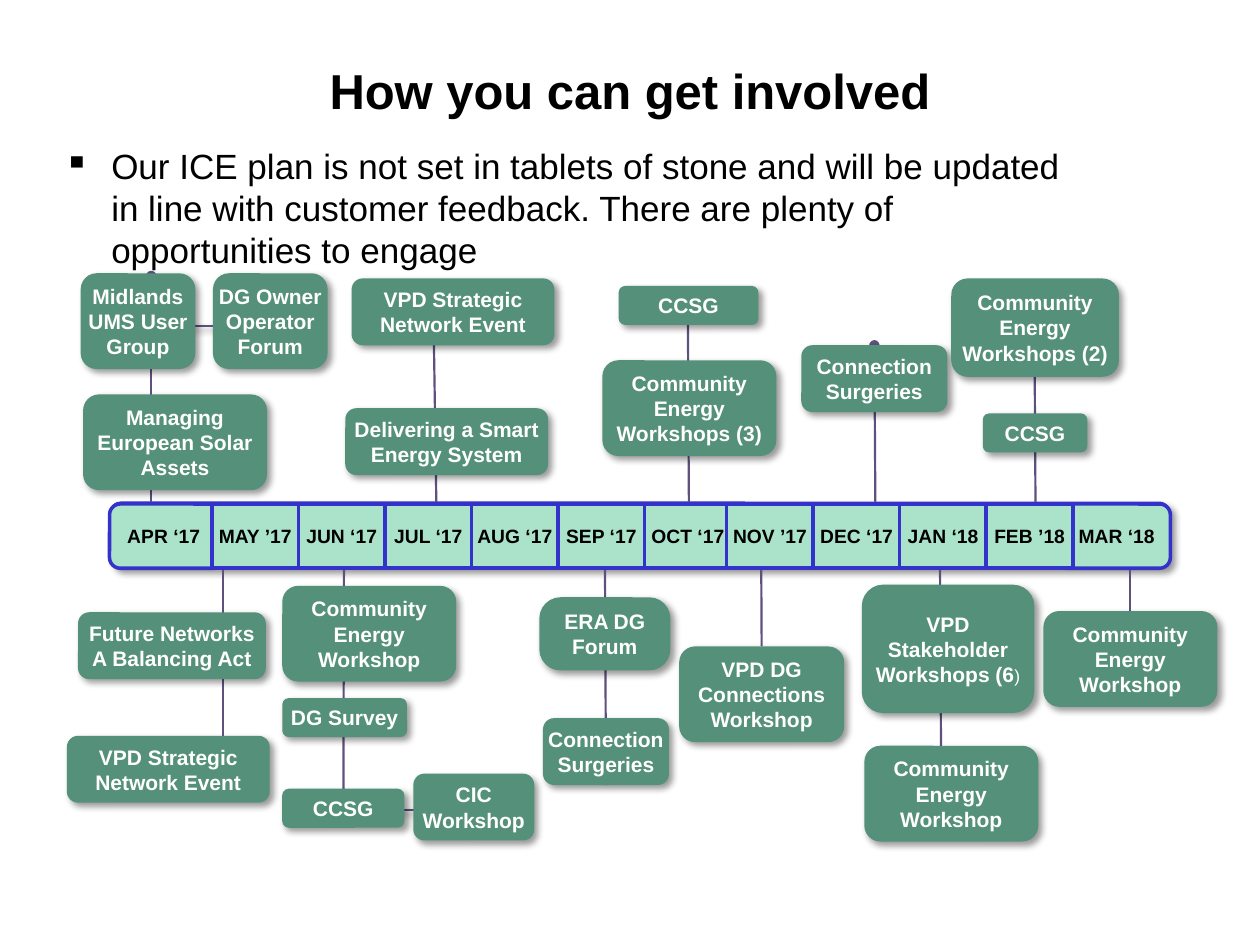
"""Build a one-slide yearly timeline of engagement events around a bar of months."""
from lxml.etree import SubElement
from pptx import Presentation
from pptx.dml.color import RGBColor
from pptx.enum.shapes import MSO_CONNECTOR, MSO_SHAPE
from pptx.enum.text import MSO_ANCHOR, PP_ALIGN
from pptx.oxml.ns import qn
from pptx.util import Pt

COLORS = {"text": "000000", "event": "55917A", "event_text": "FFFFFF",
          "month": "AAE2CA", "border": "3333CC", "link": "5F507E"}
TITLE = "How you can get involved"
BODY = ("Our ICE plan is not set in tablets of stone and will be updated in line with "
        "customer feedback. There are plenty of opportunities to engage")
FIRST, LAST = "APR ‘17", "MAR ‘18"
MONTHS = ["MAY ’17", "JUN ‘17", "JUL ‘17", "AUG ‘17", "SEP ‘17", "OCT ‘17",
          "NOV ’17", "DEC ‘17", "JAN ‘18", "FEB ’18"]
BAR_X, BAR_Y, BAR_W, BAR_H = 62.6, 288, 606.2, 36.7
CAP_W, MONTH_W, MONTH_X, PITCH = 66.2, 49.7, 121, 49.45
SECOND_HALF, HALF_SHIFT = 6, 2.5
ONE, TWO, THREE = 22.3, 38.2, 54.7

EVENTS = {
    "midlands": ("Midlands UMS User Group", 46.1, 156.2, 65.5, THREE),
    "owners": ("DG Owner Operator Forum", 121.7, 156.2, 65.5, THREE),
    "solar": ("Managing European Solar Assets", 47.5, 225.4, 105.1, THREE),
    "networks": ("Future Networks A Balancing Act", 44.6, 349.9, 107.3, TWO),
    "strategic_may": ("VPD Strategic Network Event", 38.2, 420.5, 115.9, TWO),
    "community_jun": ("Community Energy Workshop", 161.3, 334.8, 99.4, THREE),
    "survey": ("DG Survey", 161.3, 398.9, 71.3, ONE),
    "ccsg_jun": ("CCSG", 161.3, 450.7, 69.8, ONE),
    "cic": ("CIC Workshop", 236.2, 442.1, 69.1, TWO),
    "strategic_jul": ("VPD Strategic Network Event", 200.9, 159.1, 115.9, TWO),
    "smart": ("Delivering a Smart Energy System", 197.3, 233.3, 115.9, TWO),
    "forum": ("ERA DG Forum", 308.2, 341.3, 74.9, 41.8),
    "surgeries_sep": ("Connection Surgeries", 310.3, 410.4, 72, TWO),
    "ccsg_oct": ("CCSG", 353.5, 163.4, 79.9, ONE),
    "community_oct": ("Community Energy Workshops (3)", 344.2, 205.9, 99.4, THREE),
    "connections": ("VPD DG Connections Workshop", 388.1, 369.4, 94.3, THREE),
    "surgeries_dec": ("Connection Surgeries", 457.9, 197.3, 83.5, TWO),
    "stakeholder": ("VPD Stakeholder Workshops (6", 492.5, 334.1, 98.6, 73.4),
    "community_jan": ("Community Energy Workshop", 493.9, 426.2, 99.4, THREE),
    "community_feb": ("Community Energy Workshops (2)", 543.6, 159.1, 95.8, 56.2),
    "ccsg_feb": ("CCSG", 561.6, 236.2, 59.8, ONE),
    "community_mar": ("Community Energy Workshop", 596.2, 349.2, 99.4, THREE),
}
LINKS = {
    "owners": (136.1, 186.5, 79.2, 186.5),
    "jun": (196.2, 473, 196.6, 299.5),
    "cic": (276.5, 463, 218.9, 463),
    "apr": (86.4, 305.3, 86.4, 157.7),
    "jul": (249.8, 316.8, 247.7, 177.8),
    "feb": (591.8, 298.1, 591.1, 186.5),
    "dec": (500.4, 319.7, 500.4, 197.3),
    "jan": (537.8, 439.2, 537.1, 306.7),
    "may": (127.4, 450, 127.4, 316.8),
    "sep": (346.3, 448.6, 345.6, 298.1),
    "mar": (645.8, 383.8, 645.8, 316.8),
    "nov": (434.9, 369.4, 434.9, 298.8),
    "oct": (393.8, 313.9, 393.1, 177.8),
}
JOINS = [("jun", "begin", "ccsg_jun", 2), ("sep", "begin", "surgeries_sep", 2),
         ("nov", "begin", "connections", 0), ("dec", "end", "surgeries_dec", 0)]
SHADOWED_LINKS = ("owners", "cic")


def rgb(name):
    return RGBColor.from_string(COLORS[name])


def write(sp, text, size=12, color="text", bold=True, align=PP_ALIGN.CENTER,
          anchor=MSO_ANCHOR.MIDDLE, insets=(7.2, 3.6, 7.2, 3.6)):
    tf = sp.text_frame
    tf.word_wrap = True
    tf.vertical_anchor = anchor
    tf.margin_left, tf.margin_top, tf.margin_right, tf.margin_bottom = map(Pt, insets)
    p = tf.paragraphs[0]
    p.alignment = align
    r = p.add_run()
    r.text = text
    r.font.name, r.font.size, r.font.bold = "Arial", Pt(size), bold
    r.font.color.rgb = rgb(color)
    return p


def add_shadow(sp):
    effects = sp._element.spPr.find(qn("a:effectLst"))
    shadow = SubElement(effects, qn("a:outerShdw"), blurRad=str(Pt(4)), dist=str(Pt(3)),
                        dir="2700000", algn="tl", rotWithShape="0")
    color = SubElement(shadow, qn("a:srgbClr"), val="000000")
    SubElement(color, qn("a:alpha"), val="40000")


def add_box(s, kind, x, y, w, h, fill, border=None):
    sp = s.shapes.add_shape(kind, Pt(x), Pt(y), Pt(w), Pt(h))
    sp.shadow.inherit = False
    sp.fill.solid()
    sp.fill.fore_color.rgb = rgb(fill)
    if border:
        sp.line.color.rgb = rgb(border)
        sp.line.width = Pt(2)
    else:
        sp.line.fill.background()
    return sp


def add_link(s, ends):
    link = s.shapes.add_connector(MSO_CONNECTOR.STRAIGHT, *map(Pt, ends))
    link.line.color.rgb = rgb("link")
    link.line.width = Pt(1.25)
    SubElement(link.line._get_or_add_ln(), qn("a:tailEnd"), type="oval")
    SubElement(link._element.spPr, qn("a:effectLst"))
    return link


def add_month(s, kind, text, x, w, right=2.9, align=PP_ALIGN.CENTER):
    sp = add_box(s, kind, x, BAR_Y, w, BAR_H, "month", "border")
    write(sp, text, size=11, align=align, insets=(2.9, 3.6, right, 3.6))


def main():
    prs = Presentation()
    prs.slide_width, prs.slide_height = Pt(720), Pt(540)
    s = prs.slides.add_slide(prs.slide_layouts[6])

    bar = add_box(s, MSO_SHAPE.ROUNDED_RECTANGLE, BAR_X, 286.6, BAR_W, 38.2, "border")
    add_shadow(bar)
    links = {name: add_link(s, ends) for name, ends in LINKS.items()}
    for name in SHADOWED_LINKS:
        add_shadow(links[name])

    add_month(s, MSO_SHAPE.ROUNDED_RECTANGLE, FIRST, BAR_X, CAP_W, 7.2)
    add_month(s, MSO_SHAPE.ROUNDED_RECTANGLE, LAST, BAR_X + BAR_W - CAP_W, CAP_W, 7.2,
              PP_ALIGN.RIGHT)
    for i, month in enumerate(MONTHS):
        x = MONTH_X + i * PITCH - (HALF_SHIFT if i >= SECOND_HALF else 0)
        add_month(s, MSO_SHAPE.RECTANGLE, month, x, MONTH_W)

    boxes = {}
    for name, (text, *place) in EVENTS.items():
        sp = boxes[name] = add_box(s, MSO_SHAPE.ROUNDED_RECTANGLE, *place, "event")
        add_shadow(sp)
        p = write(sp, text, color="event_text", insets=(0, 2.9, 0, 2.9))
        if name == "stakeholder":
            r = p.add_run()
            r.text = ")"
            r.font.name, r.font.size, r.font.bold = "Arial", Pt(10), False
            r.font.color.rgb = rgb("event_text")
    boxes["forum"].adjustments[0] = 0.29

    for link, end, box, site in JOINS:
        join = links[link].begin_connect if end == "begin" else links[link].end_connect
        join(boxes[box], site)

    title = s.shapes.add_textbox(Pt(54), Pt(6.5), Pt(612), Pt(90))
    write(title, TITLE, size=28)
    body = s.shapes.add_textbox(Pt(29.5), Pt(79.2), Pt(604.8), Pt(79.9))
    p = write(body, BODY, size=20, bold=False, align=PP_ALIGN.LEFT, anchor=MSO_ANCHOR.TOP)
    pPr = p._p.get_or_add_pPr()
    pPr.set("marL", str(Pt(27)))
    pPr.set("indent", str(Pt(-27)))
    SubElement(pPr, qn("a:buChar"), char="▪")

    prs.save("out.pptx")


if __name__ == "__main__":
    main()
